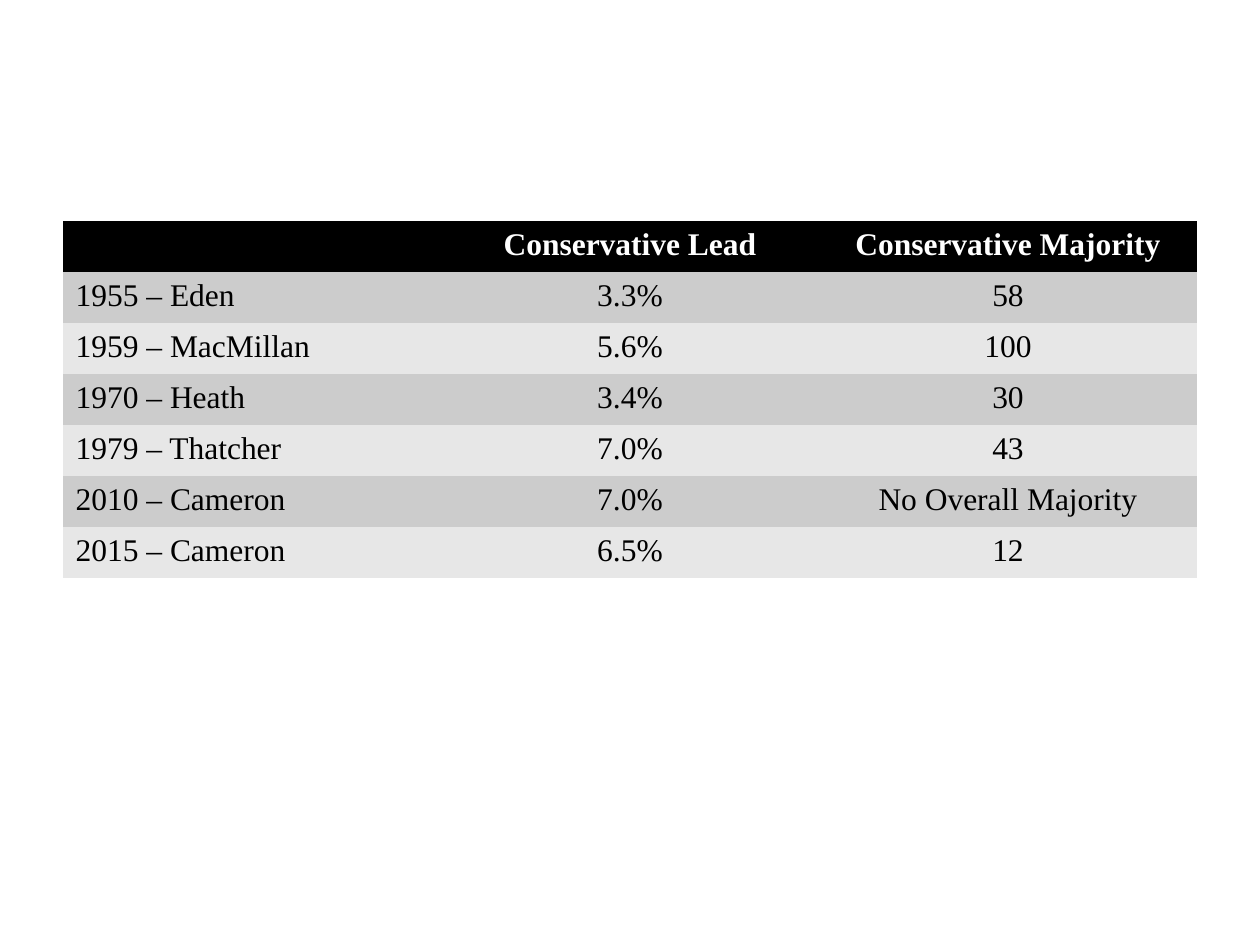
from pptx import Presentation
from pptx import util as u
from pptx.dml.color import RGBColor
from pptx.enum import text
from pptx.oxml.ns import qn

FONT = "Times New Roman"
BLACK, WHITE = "000000", "FFFFFF"
BANDS = ("CCCCCC", "E7E7E7")
NO_STYLE_NO_GRID = "{2D5ABB26-0587-4C30-8999-92F81FD0307C}"

HEADINGS = ("", "Conservative Lead", "Conservative Majority")
ELECTIONS = (
    ("1955 – Eden", "3.3%", "58"),
    ("1959 – MacMillan", "5.6%", "100"),
    ("1970 – Heath", "3.4%", "30"),
    ("1979 – Thatcher", "7.0%", "43"),
    ("2010 – Cameron", "7.0%", "No Overall Majority"),
    ("2015 – Cameron", "6.5%", "12"),
)


def paint(color_format, hex_color):
    color_format.rgb = RGBColor.from_string(hex_color)


def write_cell(cell, wording, background, ink, bold, centred):
    cell.fill.solid()
    paint(cell.fill.fore_color, background)
    if not wording:
        return
    paragraph = cell.text_frame.paragraphs[0]
    if centred:
        paragraph.alignment = text.PP_ALIGN.CENTER
    run = paragraph.add_run()
    run.text = wording
    run.font.name = FONT
    run.font.size = u.Pt(18)
    run.font.bold = bold
    paint(run.font.color, ink)


def add_election_table(slide, left, top, width, height):
    rows = (HEADINGS,) + ELECTIONS
    election_table = slide.shapes.add_table(
        len(rows), len(HEADINGS), left, top, width, height).table
    # Plain style, so that no borders show between the cells
    election_table._tbl.tblPr.find(qn("a:tableStyleId")).text = NO_STYLE_NO_GRID

    for row_no, row in enumerate(rows):
        heading = row_no == 0
        background = BLACK if heading else BANDS[(row_no - 1) % 2]
        ink = WHITE if heading else BLACK
        for col_no, wording in enumerate(row):
            write_cell(election_table.cell(row_no, col_no), wording,
                       background, ink, heading, centred=col_no > 0)


def main():
    deck = Presentation()
    deck.slide_width, deck.slide_height = u.Cm(25.4), u.Cm(19.05)
    slide = deck.slides.add_slide(deck.slide_layouts[6])
    # Election results
    add_election_table(slide, u.Cm(1.27), u.Cm(4.45), u.Cm(22.86), u.Cm(7.21))
    deck.save("out.pptx")


if __name__ == "__main__":
    main()
